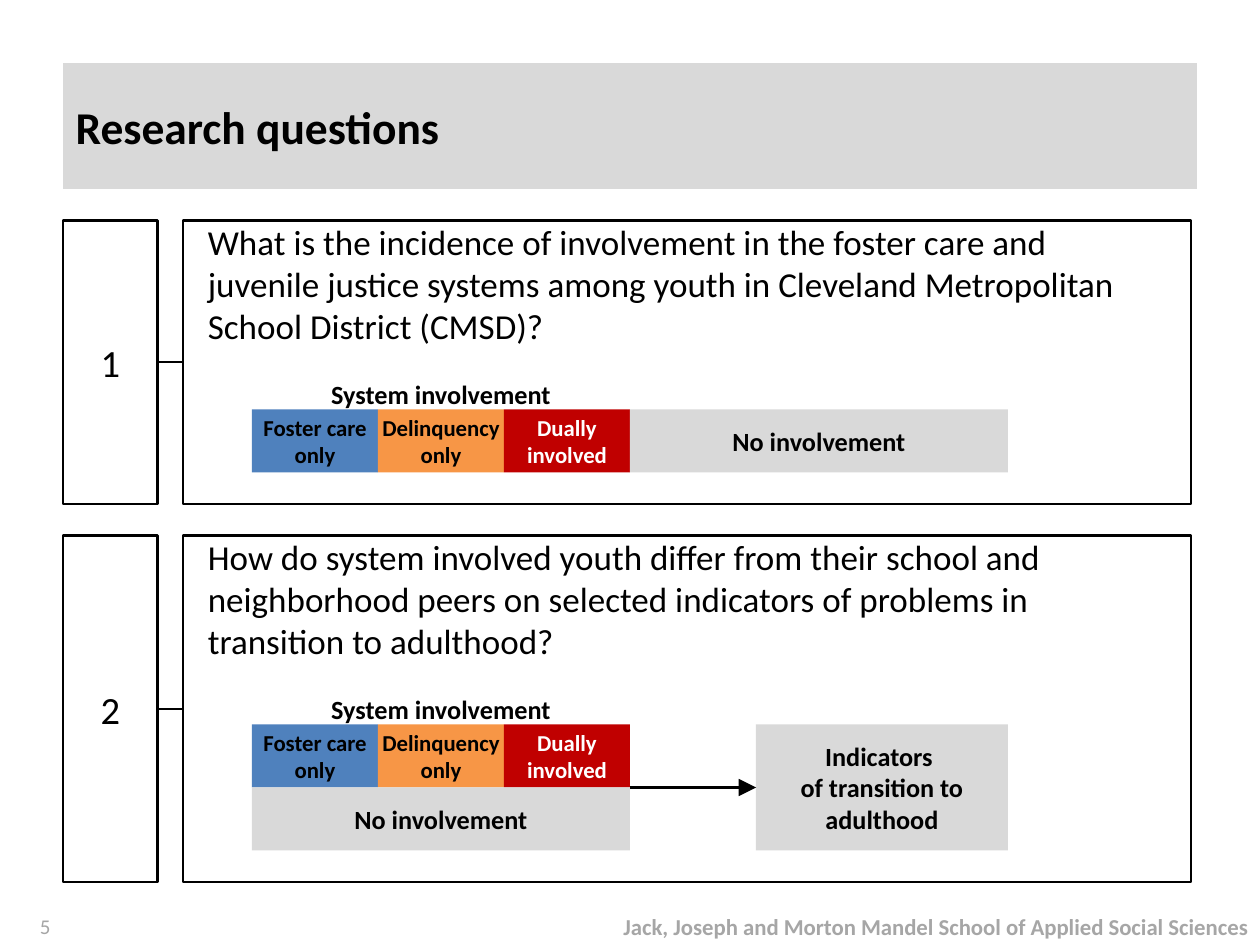
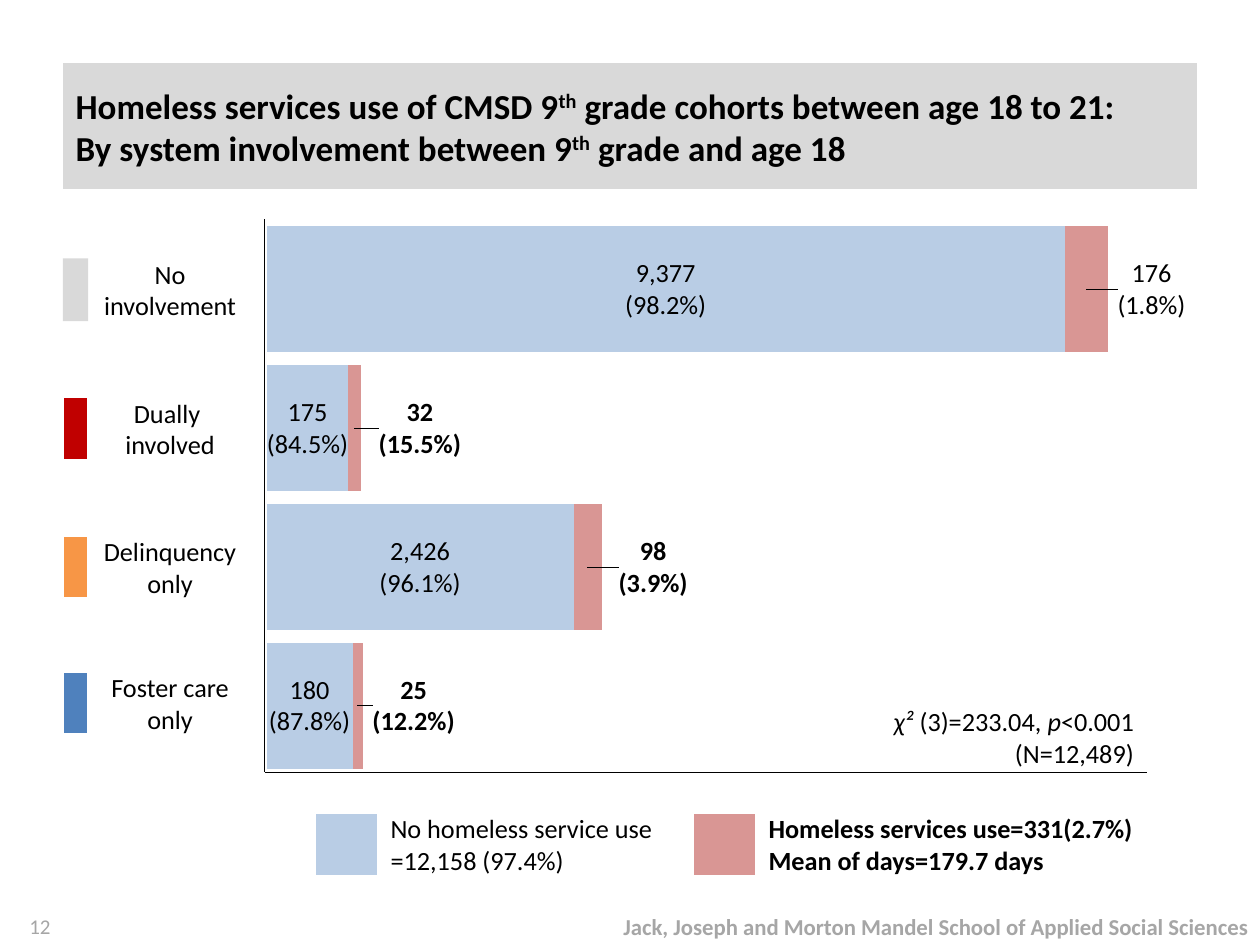
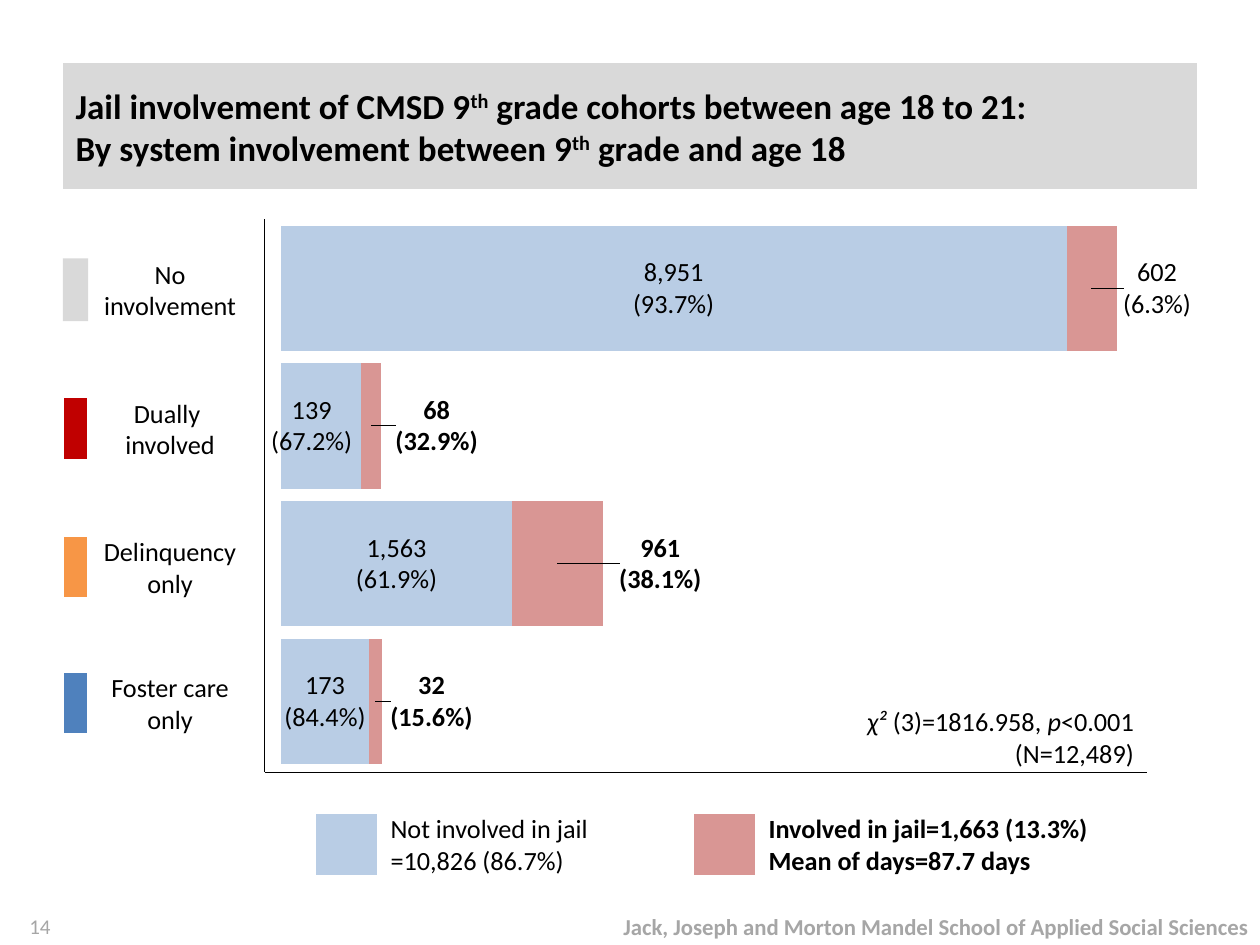
from lxml import etree
from pptx import Presentation
from pptx.chart.data import CategoryChartData
from pptx.dml.color import RGBColor
from pptx.enum.chart import XL_CHART_TYPE, XL_LABEL_POSITION
from pptx.enum.shapes import MSO_CONNECTOR, MSO_SHAPE
from pptx.enum.text import MSO_ANCHOR, MSO_AUTO_SIZE, PP_ALIGN
from pptx.oxml.ns import qn
from pptx.util import Inches, Pt

RECT = MSO_SHAPE.RECTANGLE
STRAIGHT = MSO_CONNECTOR.STRAIGHT
STACKED = XL_CHART_TYPE.BAR_STACKED
LABEL_CENTER = XL_LABEL_POSITION.CENTER
LEFT, CENTER, RIGHT = PP_ALIGN.LEFT, PP_ALIGN.CENTER, PP_ALIGN.RIGHT
TOP, MIDDLE, BOTTOM = MSO_ANCHOR.TOP, MSO_ANCHOR.MIDDLE, MSO_ANCHOR.BOTTOM
NO_FIT = MSO_AUTO_SIZE.NONE

FONT = "Calibri"
BLACK, WHITE, BAND, MUTED = "000000", "FFFFFF", "D9D9D9", "A6A6A6"
FOSTER, DELINQUENT, DUAL = "4F81BD", "F79646", "C00000"
WITHOUT, WITH = "B9CDE5", "D99694"
SCHOOL = "Jack, Joseph and Morton Mandel School of Applied Social Sciences"
FLUSH = (0, 0, 0, 0)
INDENT = (0.2, 0, 0, 0)
SIDES = (0.2, 0, 0.2, 0)
PADDED = (0.1, 0.05, 0.1, 0.05)
SYSTEMS = [
    ("Foster care\nonly", FOSTER, BLACK),
    ("Delinquency\nonly", DELINQUENT, BLACK),
    ("Dually\ninvolved", DUAL, WHITE),
]
GROUPS = [
    ("No involvement", BAND, 2.05),
    ("Dually \ninvolved", DUAL, 3.15),
    ("Delinquency only", DELINQUENT, 4.25),
    ("Foster care only", FOSTER, 5.33),
]


def rgb(color):
    return RGBColor.from_string(color)


def inches(values):
    return [Inches(value) for value in values]


def style(font, size, color=BLACK, bold=False):
    font.name = FONT
    font.size = Pt(size)
    font.bold = bold
    font.color.rgb = rgb(color)


def superscript(run):
    run.font._element.set("baseline", "30000")


def italic(run):
    run.font.italic = True


def write(frame, text, size, color=BLACK, bold=False, align=CENTER,
          anchor=MIDDLE, insets=FLUSH, emphasis=None):
    frame.word_wrap = True
    frame.auto_size = NO_FIT
    frame.vertical_anchor = anchor
    (frame.margin_left, frame.margin_top,
     frame.margin_right, frame.margin_bottom) = inches(insets)
    frame.text = text
    for paragraph in frame.paragraphs:
        paragraph.alignment = align
        pieces = paragraph.text.split("|")
        paragraph.clear()
        for index, piece in enumerate(pieces):
            if piece:
                run = paragraph.add_run()
                run.text = piece
                style(run.font, size, color, bold)
                if index % 2:
                    emphasis(run)


def block(slide, box, fill, outline=None):
    shape = slide.shapes.add_shape(RECT, *inches(box))
    shape.shadow.inherit = False
    shape.fill.solid()
    shape.fill.fore_color.rgb = rgb(fill)
    if outline:
        shape.line.color.rgb = rgb(outline)
        shape.line.width = Pt(1.25)
    else:
        shape.line.fill.background()
    return shape


def caption(slide, box, text, size, **look):
    write(slide.shapes.add_textbox(*inches(box)).text_frame, text, size, **look)


def rule(slide, start, end, width):
    line = slide.shapes.add_connector(STRAIGHT, *inches(start + end))
    line.line.color.rgb = rgb(BLACK)
    line.line.width = Pt(width)
    etree.SubElement(line._element.spPr, qn("a:effectLst"))
    return line


def add_arrowhead(line):
    outline = line._element.spPr.find(qn("a:ln"))
    etree.SubElement(outline, qn("a:tailEnd"), type="triangle", w="lg", len="lg")


def new_slide(deck, title, size, number):
    slide = deck.slides.add_slide(deck.slide_layouts[5])
    band = slide.shapes.title
    band.left, band.top, band.width, band.height = inches((0.5, 0.5, 9, 1))
    band.fill.solid()
    band.fill.fore_color.rgb = rgb(BAND)
    write(band.text_frame, title, size, bold=True, align=LEFT,
          insets=PADDED, emphasis=superscript)
    caption(slide, (4, 7.2, 6, 0.3), SCHOOL, 13, color=MUTED, bold=True,
            align=RIGHT, insets=PADDED)
    caption(slide, (0, 7.2, 0.5, 0.3), number, 12, color=MUTED,
            align=RIGHT, insets=PADDED)
    return slide


def question_panel(slide, box, number, question):
    left, top, width, height = box
    question_box = block(slide, (left + 0.95, top, width - 0.95, height), WHITE, BLACK)
    write(question_box.text_frame, question, 20, align=LEFT, anchor=TOP, insets=SIDES)
    number_box = block(slide, (left, top, 0.75, height), WHITE, BLACK)
    write(number_box.text_frame, number, 22, insets=SIDES)
    middle = top + height / 2
    link = rule(slide, (left + 0.75, middle), (left + 0.95, middle), 1)
    link.begin_connect(number_box, 3)
    link.end_connect(question_box, 1)


def system_bar(slide, left, top, column=1, row=0.5):
    caption(slide, (left, top - row, 3 * column, row), "System involvement", 15,
            bold=True, anchor=BOTTOM)
    for index, (name, fill, ink) in enumerate(SYSTEMS):
        cell = block(slide, (left + index * column, top, column, row), fill)
        write(cell.text_frame, name, 13, color=ink, bold=True)


def gray_block(slide, box, text):
    shape = block(slide, box, BAND)
    write(shape.text_frame, text, 15, bold=True)
    return shape


def questions_slide(deck):
    slide = new_slide(deck, "Research questions", 26, "5")
    question_panel(slide, (0.5, 1.75, 8.95, 2.25), "1",
                   "What is the incidence of involvement in the foster care and "
                   "juvenile justice systems among youth in Cleveland Metropolitan "
                   "School District (CMSD)?")
    system_bar(slide, 2, 3.25)
    gray_block(slide, (5, 3.25, 3, 0.5), "No involvement")
    question_panel(slide, (0.5, 4.25, 8.95, 2.75), "2",
                   "How do system involved youth differ from their school and "
                   "neighborhood peers on selected indicators of problems in "
                   "transition to adulthood?")
    system_bar(slide, 2, 5.75)
    gray_block(slide, (2, 6.25, 3, 0.5), "No involvement")
    indicators = gray_block(slide, (6, 5.75, 2, 1),
                            "Indicators \nof transition to\nadulthood")
    arrow = rule(slide, (5, 6.25), (6, 6.25), 1.5)
    arrow.end_connect(indicators, 1)
    add_arrowhead(arrow)


def manual_layout(**settings):
    layout = etree.Element(qn("c:layout"))
    manual = etree.SubElement(layout, qn("c:manualLayout"))
    for tag, value in settings.items():
        etree.SubElement(manual, qn("c:" + tag), val=str(value))
    return layout


def label_points(series, labels, bold):
    shared = series.data_labels
    shared.show_value = True
    shared.position = LABEL_CENTER
    style(shared.font, 15, bold=bold)
    for index, (text, shift) in enumerate(labels):
        label = series.points[index].data_label
        frame = label.text_frame
        frame.text = text
        for paragraph in frame.paragraphs:
            for run in paragraph.runs:
                style(run.font, 15, bold=bold and index < len(labels) - 1)
        label.position = LABEL_CENTER
    for mark, (text, shift) in zip(series._element.iter(qn("c:dLbl")), labels):
        if shift:
            mark.insert(1, manual_layout(x=shift, y=0))
    for leader in list(series._element.iter(qn("c:showLeaderLines"))):
        leader.getparent().remove(leader)


def stacked_chart(slide, box, plot_top, plot_height, minimum, series_rows):
    data = CategoryChartData()
    data.categories = ["1", "2", "3", "4"]
    for index, (values, labels) in enumerate(series_rows, 1):
        data.add_series(f"Series {index}", values)
    chart = slide.shapes.add_chart(STACKED, *inches(box), data).chart
    chart.has_legend = False
    chart.has_title = False
    style(chart.font, 10)
    chart.category_axis.visible = False
    scale = chart.value_axis
    scale.visible = False
    scale.has_major_gridlines = False
    scale.minimum_scale, scale.maximum_scale = minimum, 4500
    plot = chart.plots[0]
    plot.gap_width, plot.overlap = 10, 100
    plot.vary_by_categories = False
    for series, color, (values, labels) in zip(plot.series, (WITHOUT, WITH), series_rows):
        series.format.fill.solid()
        series.format.fill.fore_color.rgb = rgb(color)
        label_points(series, labels, color == WITH)
    area = chart._chartSpace.find(".//" + qn("c:plotArea"))
    for automatic in area.findall(qn("c:layout")):
        area.remove(automatic)
    area.insert(0, manual_layout(layoutTarget="inner", xMode="edge", yMode="edge",
                                 x=0, y=plot_top, w=0.99, h=plot_height))


def group_names(slide, left, width=1.5, height=0.5):
    for name, color, top in GROUPS:
        box = block(slide, (left, top, width, height), WHITE)
        write(box.text_frame, name, 15, insets=INDENT)
        block(slide, (left, top, 0.2, height), color, None if color == BAND else WHITE)


def legend_entry(slide, left, top, width, color, text, bold):
    box = block(slide, (left + 0.4, top + 0.05, width, 0.4), WHITE)
    write(box.text_frame, text, 15, bold=bold, align=LEFT, insets=INDENT)
    block(slide, (left, top, 0.5, 0.5), color, WHITE)


def outcome_slide(deck, outcome, number, chart, statistic, legend):
    slide = new_slide(deck, f"{outcome} of CMSD 9|th| grade cohorts between age 18 to 21:\n"
                      "By system involvement between 9|th| grade and age 18", 20, number)
    stacked_chart(slide, *chart)
    group_names(slide, 0.5)
    without_text, without_width, with_text = legend
    legend_entry(slide, 2.5, 6.45, without_width, WITHOUT, without_text, False)
    legend_entry(slide, 5.5, 6.45, 3.2, WITH, with_text, True)
    box = block(slide, (6.3, 5.55, 2.7, 0.6), WHITE)
    write(box.text_frame, f"|χ²| (3)={statistic}, |p|<0.001\n(N=12,489)", 15,
          align=RIGHT, emphasis=italic)
    rule(slide, (2.1, 6.13), (9.1, 6.13), 0.25)
    rule(slide, (2.1, 1.74), (2.1, 6.13), 0.25)


def main():
    deck = Presentation()
    deck.slide_width, deck.slide_height = inches((10, 7.5))
    questions_slide(deck)
    homeless = [
        ((420, 1500, 400, 3900),
         [("180\n(87.8%)", 0), ("2,426\n(96.1%)", 0),
          ("175\n(84.5%)", 0), ("9,377\n(98.2%)", 0)]),
        ((51, 140, 61, 210),
         [("25\n(12.2%)", 0.06), ("98\n(3.9%)", 0.07),
          ("32\n(15.5%)", 0.07), ("176\n(1.8%)", 0.07)]),
    ]
    outcome_slide(deck, "Homeless services use", "12",
                  ((2.1, 1.5, 7.4, 4.9), 0.05, 0.9, -10, homeless), "233.04",
                  ("No homeless service use =12,158 (97.4%)", 2.3,
                   "Homeless services use=331(2.7%)\nMean of days=179.7 days"))
    jail = [
        ((440, 1150, 400, 3900),
         [("173\n(84.4%)", 0), ("1,563\n(61.9%)", 0),
          ("139\n(67.2%)", -0.01), ("8,951\n(93.7%)", 0)]),
        ((62, 450, 100, 250),
         [("32\n(15.6%)", 0.06), ("961\n(38.1%)", 0.11),
          ("68\n(32.9%)", 0.07), ("602\n(6.3%)", 0.07)]),
    ]
    outcome_slide(deck, "Jail involvement", "14",
                  ((2.1, 1.6, 7.4, 4.75), 0.03, 0.92, -80, jail), "1816.958",
                  ("Not involved in jail =10,826 (86.7%)", 2,
                   "Involved in jail=1,663 (13.3%)\nMean of days=87.7 days"))
    deck.save("out.pptx")


if __name__ == "__main__":
    main()
